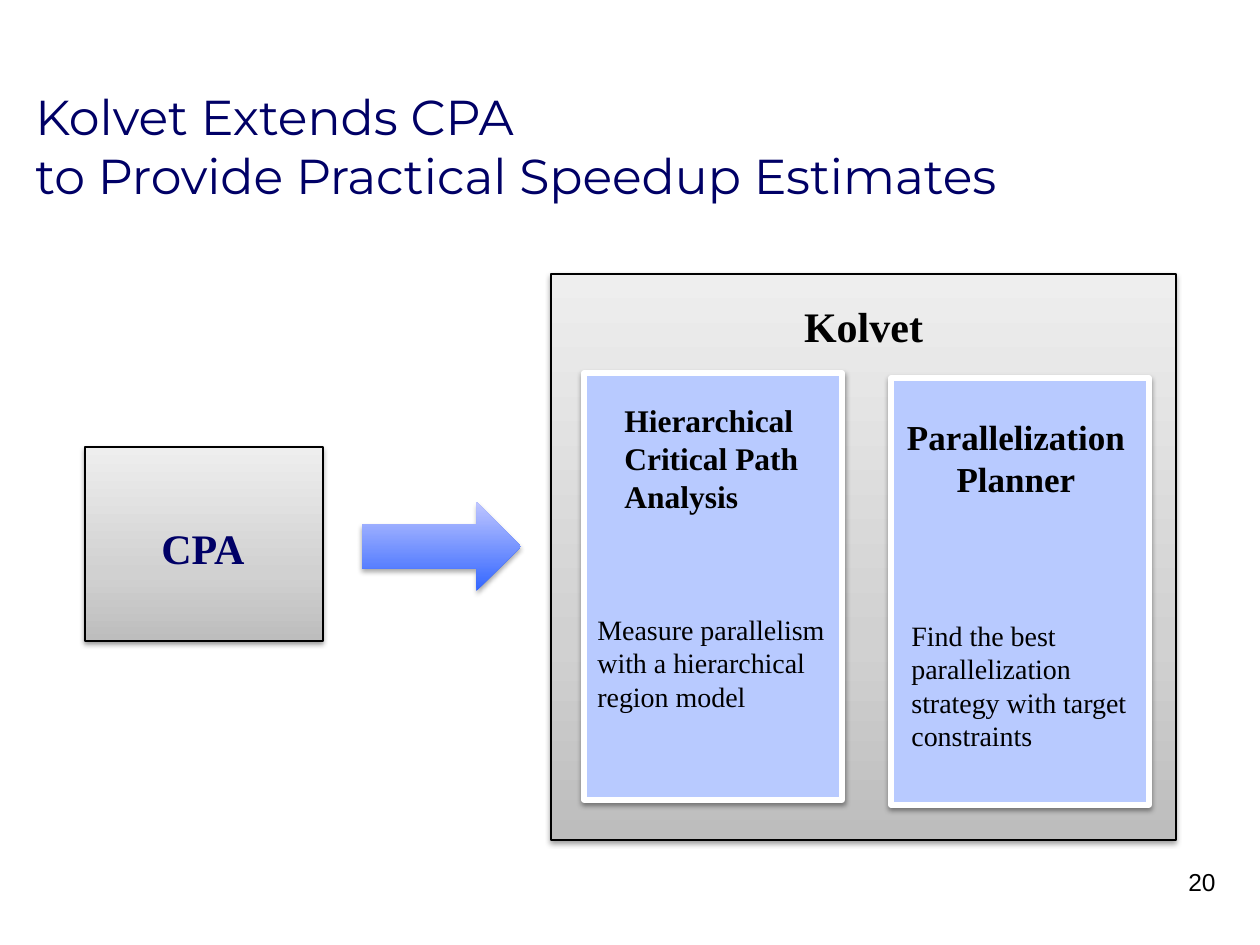
from lxml import etree
from pptx import Presentation
from pptx.dml.color import RGBColor
from pptx.enum.shapes import MSO_SHAPE
from pptx.enum.text import MSO_ANCHOR, PP_ALIGN
from pptx.oxml.ns import qn
from pptx.util import Emu, Pt

RECT, ARROW = MSO_SHAPE.RECTANGLE, MSO_SHAPE.RIGHT_ARROW
LEFT, MID, RIGHT = PP_ALIGN.LEFT, PP_ALIGN.CENTER, PP_ALIGN.RIGHT
TOP, CENTER = MSO_ANCHOR.TOP, MSO_ANCHOR.MIDDLE
PX = 914400 / 126
SERIF, SANS, HEAD = "Times New Roman", "Arial", "Montserrat"
COLORS = {"black": "000000", "white": "FFFFFF", "navy": "000066", "card": "B8CAFF"}
GRAY = [(0, "BDBDBD"), (35, "D1D1D1"), (100, "EEEEEE")]
BLUE = [(0, "3366FF"), (100, "BFC6FF")]

# Shapes: preset, box in px, fill, line (color, points), shadow opacity
SHAPES = [
    (RECT, (551, 274, 625, 566), GRAY, ("black", 0.75), 38),
    (RECT, (584, 373, 258, 427), "card", ("white", 3), 38),
    (RECT, (891, 378, 258, 427), "card", ("white", 3), 38),
    (RECT, (85, 447, 238, 194), GRAY, ("black", 0.75), 38),
    (ARROW, (362, 502, 159, 89), BLUE, None, 35),
]

# Texts: box in px, paragraphs of lines, font, size, color, bold, align, anchor, wrap
TEXTS = [
    ((23, 66, 1201, 158),
     [["Kolvet Extends CPA", "to Provide Practical Speedup Estimates"]],
     HEAD, 28, "navy", False, LEFT, CENTER, True),
    ((966, 861, 262, 63), [["20"]], SANS, 14, "black", False, RIGHT, TOP, True),
    ((894, 409, 244, 97), [["Parallelization", "Planner"]],
     SERIF, 20, "black", True, MID, TOP, False),
    ((786, 294, 155, 63), [["Kolvet"]], SERIF, 24, "black", True, MID, TOP, False),
    ((612, 395, 202, 127), [["Hierarchical", "Critical Path", "Analysis"]],
     SERIF, 18, "black", True, LEFT, TOP, False),
    ((148, 516, 110, 63), [["CPA"]], SERIF, 24, "navy", True, MID, TOP, False),
    ((585, 606, 257, 115),
     [["Measure parallelism"], ["with a hierarchical", "region model"]],
     SERIF, 16, "black", False, LEFT, TOP, True),
    ((899, 612, 257, 149),
     [["Find the best", "parallelization", "strategy with target constraints"]],
     SERIF, 16, "black", False, LEFT, TOP, True),
]


def place(box):
    return [Emu(round(v * PX)) for v in box]


def color(name):
    return RGBColor.from_string(COLORS[name])


def node(parent, tag, **attrs):
    return etree.SubElement(parent, qn(tag), {k: str(v) for k, v in attrs.items()})


def shade(shape, stops):
    shape.fill.gradient()
    shape.fill.gradient_angle = 90
    group = shape._element.spPr.find(".//" + qn("a:gsLst"))
    for old in list(group):
        group.remove(old)
    for pos, tone in stops:
        node(node(group, "a:gs", pos=pos * 1000), "a:srgbClr", val=tone)


def cast(shape, alpha):
    shape.shadow.inherit = False
    group = shape._element.spPr.find(qn("a:effectLst"))
    drop = node(group, "a:outerShdw", blurRad=Pt(3.1), dist=Pt(1.7),
                dir=5400000, rotWithShape=0)
    tone = node(drop, "a:srgbClr", val=COLORS["black"])
    node(tone, "a:alpha", val=alpha * 1000)


def draw(slide, kind, box, fill, line, alpha):
    shape = slide.shapes.add_shape(kind, *place(box))
    if isinstance(fill, list):
        shade(shape, fill)
    else:
        shape.fill.solid()
        shape.fill.fore_color.rgb = color(fill)
    if line:
        shape.line.color.rgb = color(line[0])
        shape.line.width = Pt(line[1])
    else:
        shape.line.fill.background()
    cast(shape, alpha)


def write(slide, box, paras, face, size, tone, bold, align, anchor, wrap):
    frame = slide.shapes.add_textbox(*place(box)).text_frame
    frame.word_wrap = wrap
    frame.vertical_anchor = anchor
    for i, lines in enumerate(paras):
        para = frame.add_paragraph() if i else frame.paragraphs[0]
        para.alignment = align
        for j, text in enumerate(lines):
            if j:
                para.add_line_break()
            run = para.add_run()
            run.text = text
            run.font.name = face
            run.font.size = Pt(size)
            run.font.bold = bold
            run.font.color.rgb = color(tone)


def main():
    deck = Presentation()
    deck.slide_width, deck.slide_height = place((1260, 945))
    slide = deck.slides.add_slide(deck.slide_layouts[6])
    # Panels, cards and arrow
    for item in SHAPES:
        draw(slide, *item)
    # Title, labels and page number
    for item in TEXTS:
        write(slide, *item)
    deck.save("out.pptx")


if __name__ == "__main__":
    main()
